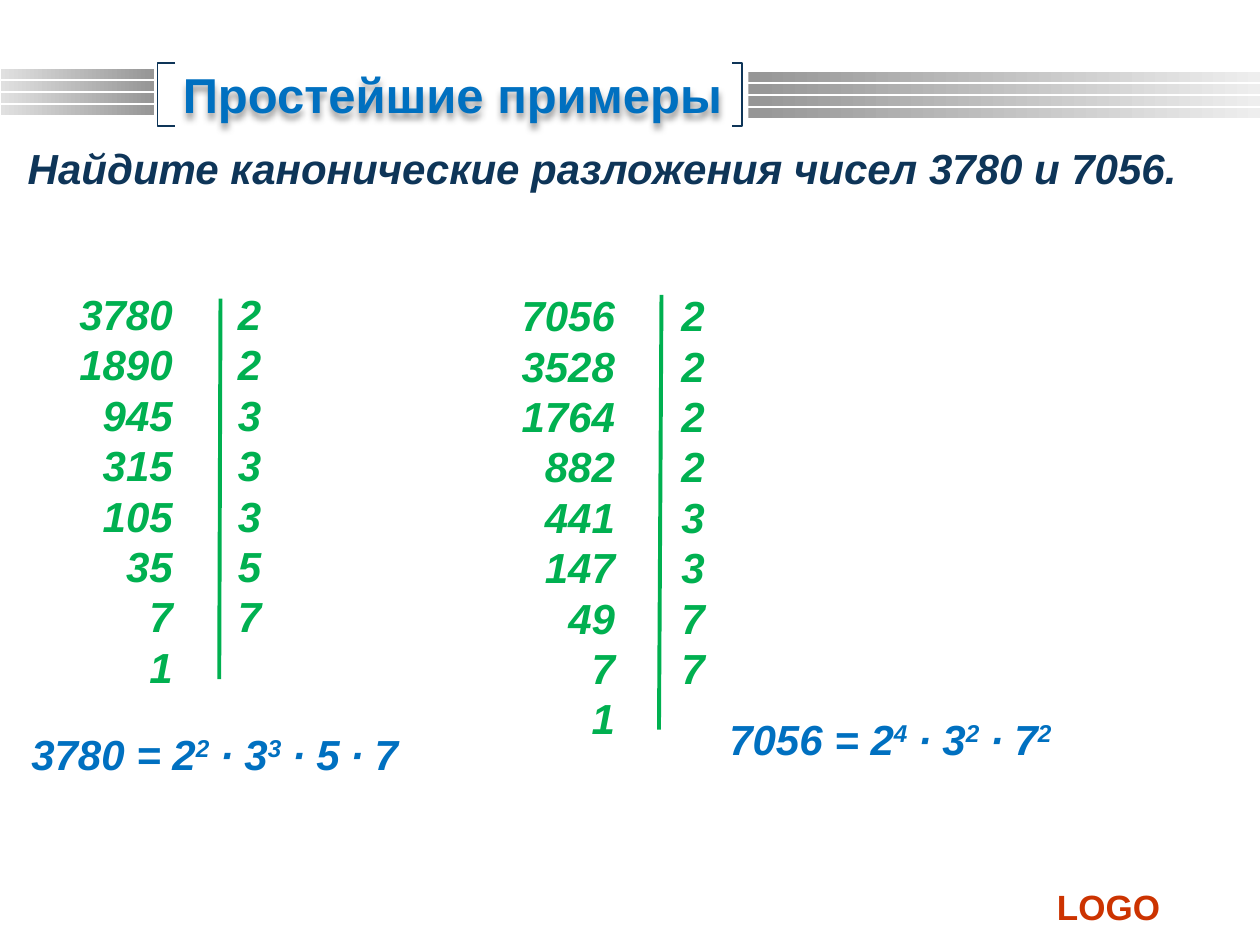
from lxml import etree
from pptx import Presentation
from pptx.dml.color import RGBColor
from pptx.enum.shapes import MSO_CONNECTOR, MSO_SHAPE
from pptx.enum.text import MSO_ANCHOR, MSO_AUTO_SIZE, PP_ALIGN
from pptx.oxml.ns import qn
from pptx.util import Inches, Pt

RECTANGLE = MSO_SHAPE.RECTANGLE
STRAIGHT = MSO_CONNECTOR.STRAIGHT
LEFT, CENTER, RIGHT = PP_ALIGN.LEFT, PP_ALIGN.CENTER, PP_ALIGN.RIGHT

NAVY = RGBColor(0x0E, 0x35, 0x58)
BLUE = RGBColor(0x00, 0x70, 0xC0)
GREEN = RGBColor(0x00, 0xB0, 0x50)
RED = RGBColor(0xCC, 0x33, 0x00)
GREY = RGBColor(0x96, 0x96, 0x96)
PALE_GREY = RGBColor(0xE0, 0xE0, 0xE0)
PALEST_GREY = RGBColor(0xEE, 0xEE, 0xEE)

BAR_COUNT, BAR_PITCH, BAR_HEIGHT = 4, 0.095, 0.08
LINE_HEIGHT = 1.2  # share of the font size


def write(shape, lines, size=24, color=GREEN, italic=True, align=LEFT):
    """Fill a shape with bold lines; text between ^ marks is superscript."""
    frame = shape.text_frame
    frame.word_wrap = True
    frame.auto_size = MSO_AUTO_SIZE.NONE
    frame.vertical_anchor = MSO_ANCHOR.TOP
    for index, line in enumerate(lines):
        paragraph = frame.add_paragraph() if index else frame.paragraphs[0]
        paragraph.alignment = align
        paragraph.line_spacing = Pt(size * LINE_HEIGHT)
        paragraph.space_before = Pt(0)
        for position, part in enumerate(line.split("^")):
            if not part:
                continue
            run = paragraph.add_run()
            run.text = part
            font = run.font
            font.name, font.size = "Arial", Pt(size)
            font.bold, font.italic = True, italic
            font.color.rgb = color
            if position % 2:
                run._r.get_or_add_rPr().set("baseline", "30000")


def place(shape, left, top, width, height):
    shape.left, shape.top = Inches(left), Inches(top)
    shape.width, shape.height = Inches(width), Inches(height)


def add_text(slide, box, lines, **text_format):
    textbox = slide.shapes.add_textbox(*map(Inches, box))
    write(textbox, lines, **text_format)


def add_bars(slide, left, top, width, start_color, end_color):
    for row in range(BAR_COUNT):
        bar = slide.shapes.add_shape(
            RECTANGLE, Inches(left), Inches(top + row * BAR_PITCH),
            Inches(width), Inches(BAR_HEIGHT))
        bar.shadow.inherit = False
        bar.line.fill.background()
        bar.fill.gradient()
        bar.fill.gradient_angle = 0
        for stop, color in zip(bar.fill.gradient_stops, (start_color, end_color)):
            stop.color.rgb = color


def add_bracket(slide, tip, spine, top=50, bottom=100):
    """Draw an open bracket, measured in hundredths of an inch."""
    builder = slide.shapes.build_freeform(tip, top, scale=Inches(0.01))
    builder.add_line_segments(
        [(spine, top), (spine, bottom), (tip, bottom)], close=False)
    bracket = builder.convert_to_shape()
    bracket.shadow.inherit = False
    bracket.fill.background()
    bracket.line.color.rgb = NAVY
    bracket.line.width = Pt(0.75)


def add_divider(slide, *ends):
    divider = slide.shapes.add_connector(STRAIGHT, *map(Inches, ends))
    divider.line.color.rgb = GREEN
    divider.line.width = Pt(2.25)
    etree.SubElement(divider._element.spPr, qn("a:effectLst"))


def add_text_shadow(shape):
    """Cast a soft shadow; without a fill it falls from the letters."""
    effects = etree.SubElement(shape._element.spPr, qn("a:effectLst"))
    shadow = etree.SubElement(effects, qn("a:outerShdw"), blurRad="50800",
                              dist="38100", dir="5400000", algn="t",
                              rotWithShape="0")
    color = etree.SubElement(shadow, qn("a:srgbClr"), val="000000")
    etree.SubElement(color, qn("a:alpha"), val="40000")


def add_factorization(slide, number, factors, left, top, factors_left):
    """Quotients on the left, prime factors on the right."""
    quotients = [number]
    for factor in factors:
        quotients.append(quotients[-1] // factor)
    row = 24 * LINE_HEIGHT / 72
    add_text(slide, (left, top, 1.2, len(quotients) * row + 0.1),
             map(str, quotients), align=RIGHT)
    add_text(slide, (factors_left, top, 0.42, len(factors) * row + 0.1),
             map(str, factors))


def main():
    deck = Presentation()
    deck.slide_width, deck.slide_height = Inches(10), Inches(7.5)
    slide = deck.slides.add_slide(deck.slide_layouts[1])
    title, task = slide.placeholders

    # Header decoration
    add_bars(slide, 0.01, 0.55, 1.21, PALE_GREY, GREY)
    add_bars(slide, 5.94, 0.57, 4.06, GREY, PALEST_GREY)
    add_bracket(slide, tip=139, spine=125)
    add_bracket(slide, tip=581, spine=589)

    # Title and task
    place(title, 1.27, 0.46, 4.64, 0.57)
    write(title, ["Простейшие примеры"], size=28, color=BLUE,
          italic=False, align=CENTER)
    add_text_shadow(title)
    place(task, 0.12, 1.08, 9.59, 0.5)
    task_format = task.text_frame.paragraphs[0]._p.get_or_add_pPr()
    task_format.set("marL", "0")
    task_format.set("indent", "0")
    etree.SubElement(task_format, qn("a:buNone"))
    write(task, ["Найдите канонические разложения чисел 3780 и 7056."],
          color=NAVY)

    # Step-by-step division
    add_factorization(slide, 3780, [2, 2, 3, 3, 3, 5, 7], 0.27, 2.24, 1.79)
    add_divider(slide, 1.75, 2.37, 1.74, 5.39)
    add_factorization(slide, 7056, [2, 2, 2, 2, 3, 3, 7, 7], 3.78, 2.25, 5.31)
    add_divider(slide, 5.25, 2.34, 5.23, 5.79)

    # Canonical factorizations
    add_text(slide, (0.15, 5.73, 4.2, 0.5),
             ["3780 = 2^2^ ∙ 3^3^ ∙ 5 ∙ 7"], color=BLUE)
    add_text(slide, (5.69, 5.61, 3.86, 0.5),
             ["7056 = 2^4^ ∙ 3^2^ ∙ 7^2^"], color=BLUE)

    # Footer
    add_text(slide, (8.29, 6.98, 1.04, 0.43), ["LOGO"], size=20,
             color=RED, italic=False)

    deck.save("out.pptx")


if __name__ == "__main__":
    main()
